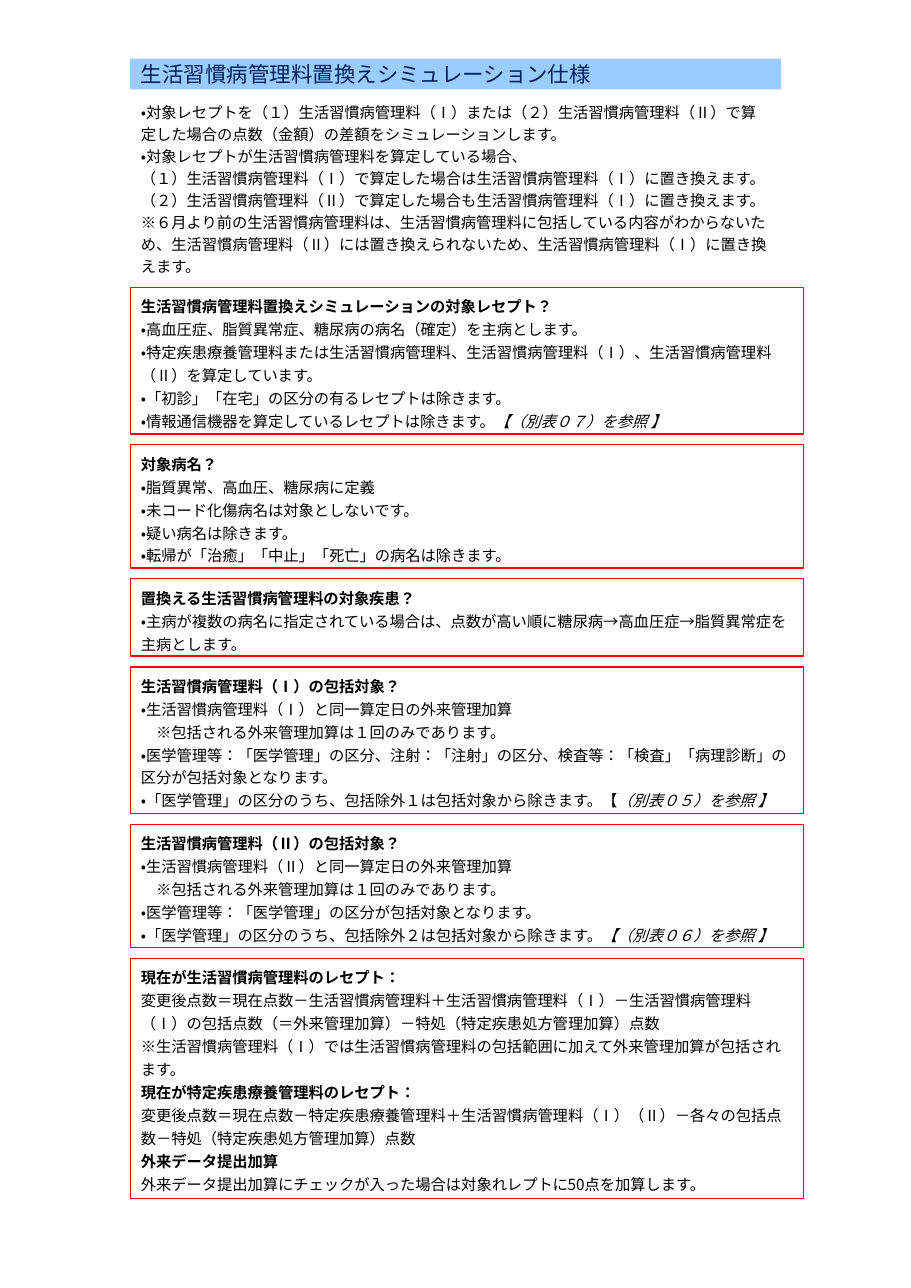
"""Build the specification sheet for the management-fee replacement simulation."""
from collections import namedtuple

from pptx import Presentation
from pptx import util as u
from pptx.dml.color import RGBColor
from pptx.enum import lang, shapes, text

NAVY = RGBColor(0x00, 0x20, 0x60)
SKY = RGBColor(0x99, 0xCC, 0xFF)
RED = RGBColor(0xFF, 0x00, 0x00)
WHITE = RGBColor(0xFF, 0xFF, 0xFF)
BLACK = RGBColor(0x00, 0x00, 0x00)
SANS = "Noto Sans CJK JP"
SERIF = "TeX Gyre Schola"

LEFT, TITLE_WIDTH, BOX_WIDTH = 3.0, 15.01, 15.52
FIRST_BOX_TOP, BOX_GAP = 6.63, 0.25

Run = namedtuple("Run", "words bold italic", defaults=(False, False))


def heading(words):
    """Return a paragraph of one bold run."""
    return [Run(words, bold=True)]


def body(words, reference=""):
    """Return a plain paragraph, with an italic reference if there is one."""
    runs = [Run(words)]
    if reference:
        runs.append(Run(reference, italic=True))
    return runs


INTRODUCTION = [
    body("・対象レセプトを（１）生活習慣病管理料（Ⅰ）または（２）生活習慣病管理料（Ⅱ）で算定した場合の点数（金額）の差額をシミュレーションします。"),
    body("・対象レセプトが生活習慣病管理料を算定している場合、"),
    body("（１）生活習慣病管理料（Ⅰ）で算定した場合は生活習慣病管理料（Ⅰ）に置き換えます。"),
    body("（２）生活習慣病管理料（Ⅱ）で算定した場合も生活習慣病管理料（Ⅰ）に置き換えます。"),
    body("※６月より前の生活習慣病管理料は、生活習慣病管理料に包括している内容がわからないため、生活習慣病管理料（Ⅱ）には置き換えられないため、生活習慣病管理料（Ⅰ）に置き換えます。"),
]

BOXES = [
    (3.38, [
        heading("生活習慣病管理料置換えシミュレーションの対象レセプト？"),
        body("・高血圧症、脂質異常症、糖尿病の病名（確定）を主病とします。"),
        body("・特定疾患療養管理料または生活習慣病管理料、生活習慣病管理料（Ⅰ）、生活習慣病管理料（Ⅱ）を算定しています。"),
        body("・「初診」「在宅」の区分の有るレセプトは除きます。"),
        body("・情報通信機器を算定しているレセプトは除きます。", "【（別表０７）を参照 】"),
    ]),
    (2.84, [
        heading("対象病名？"),
        body("・脂質異常、高血圧、糖尿病に定義"),
        body("・未コード化傷病名は対象としないです。"),
        body("・疑い病名は除きます。"),
        body("・転帰が「治癒」「中止」「死亡」の病名は除きます。"),
    ]),
    (1.78, [
        heading("置換える生活習慣病管理料の対象疾患？"),
        body("・主病が複数の病名に指定されている場合は、点数が高い順に糖尿病→高血圧症→脂質異常症を主病とします。"),
    ]),
    (3.38, [
        heading("生活習慣病管理料（Ⅰ）の包括対象？"),
        body("・生活習慣病管理料（Ⅰ）と同一算定日の外来管理加算"),
        body("　※包括される外来管理加算は１回のみであります。"),
        body("・医学管理等：「医学管理」の区分、注射：「注射」の区分、検査等：「検査」「病理診断」の区分が包括対象となります。"),
        body("・「医学管理」の区分のうち、包括除外１は包括対象から除きます。【", "（別表０５）を参照 】"),
    ]),
    (2.84, [
        heading("生活習慣病管理料（Ⅱ）の包括対象？"),
        body("・生活習慣病管理料（Ⅱ）と同一算定日の外来管理加算"),
        body("　※包括される外来管理加算は１回のみであります。"),
        body("・医学管理等：「医学管理」の区分が包括対象となります。"),
        body("・「医学管理」の区分のうち、包括除外２は包括対象から除きます。", "【（別表０６）を参照 】"),
    ]),
    (5.54, [
        heading("現在が生活習慣病管理料のレセプト："),
        body("変更後点数＝現在点数－生活習慣病管理料＋生活習慣病管理料（Ⅰ）－生活習慣病管理料（Ⅰ）の包括点数（＝外来管理加算）－特処（特定疾患処方管理加算）点数"),
        body("※生活習慣病管理料（Ⅰ）では生活習慣病管理料の包括範囲に加えて外来管理加算が包括されます。"),
        heading("現在が特定疾患療養管理料のレセプト："),
        body("変更後点数＝現在点数－特定疾患療養管理料＋生活習慣病管理料（Ⅰ）（Ⅱ）－各々の包括点数－特処（特定疾患処方管理加算）点数"),
        heading("外来データ提出加算"),
        body("外来データ提出加算にチェックが入った場合は対象れレプトに50点を加算します。"),
    ]),
]


class Sheet:
    """Hold the current slide and its text style."""

    def __init__(self, slide, size=10):
        """Keep the slide and the body text size."""
        self.slide = slide
        self.size = size

    def add_text(self, shape, paragraphs, font=SANS, size=None, color=BLACK,
                 spacing=None, anchor=text.MSO_ANCHOR.TOP):
        """Fill a shape with paragraphs, run by run."""
        frame = shape.text_frame
        frame.word_wrap = True
        frame.auto_size = text.MSO_AUTO_SIZE.NONE
        frame.vertical_anchor = anchor
        for index, runs in enumerate(paragraphs):
            paragraph = frame.add_paragraph() if index else frame.paragraphs[0]
            paragraph.alignment = text.PP_ALIGN.LEFT
            paragraph.line_spacing = spacing
            for part in runs:
                run = paragraph.add_run()
                run.text = part.words
                run.font.name = font
                run.font.size = u.Pt(size or self.size)
                run.font.bold = part.bold
                run.font.italic = part.italic
                run.font.color.rgb = color
                run.font.language_id = lang.MSO_LANGUAGE_ID.JAPANESE

    def rectangle(self, top, width, height, fill, line=None):
        """Add a rectangle at the left margin."""
        shape = self.slide.shapes.add_shape(
            shapes.MSO_SHAPE.RECTANGLE,
            u.Cm(LEFT), u.Cm(top), u.Cm(width), u.Cm(height))
        shape.shadow.inherit = False
        shape.fill.solid()
        shape.fill.fore_color.rgb = fill
        if line is None:
            shape.line.fill.background()
        else:
            shape.line.color.rgb = line
            shape.line.width = u.Pt(0.75)
        return shape

    def title(self, words, top, height):
        """Add the title bar."""
        bar = self.rectangle(top, TITLE_WIDTH, height, SKY)
        self.add_text(bar, [[Run(words)]], size=14, color=NAVY,
                      anchor=text.MSO_ANCHOR.MIDDLE)

    def introduction(self, paragraphs, top, height):
        """Add the opening text."""
        box = self.slide.shapes.add_textbox(
            u.Cm(LEFT), u.Cm(top), u.Cm(TITLE_WIDTH), u.Cm(height))
        self.add_text(box, paragraphs, font=SERIF, spacing=u.Pt(14.4))

    def rule_box(self, paragraphs, top, height):
        """Add a red-framed box of rules."""
        box = self.rectangle(top, BOX_WIDTH, height, WHITE, RED)
        self.add_text(box, paragraphs, spacing=u.Pt(15))


def main():
    """Build and save the presentation."""
    presentation = Presentation()
    presentation.slide_width = u.Cm(21)
    presentation.slide_height = u.Cm(29.7)
    sheet = Sheet(presentation.slides.add_slide(presentation.slide_layouts[6]))
    sheet.title("生活習慣病管理料置換えシミュレーション仕様", 1.35, 0.71)
    sheet.introduction(INTRODUCTION, 2.16, 4.29)
    top = FIRST_BOX_TOP
    for height, paragraphs in BOXES:
        sheet.rule_box(paragraphs, top, height)
        top += height + BOX_GAP
    presentation.save("out.pptx")


if __name__ == "__main__":
    main()
